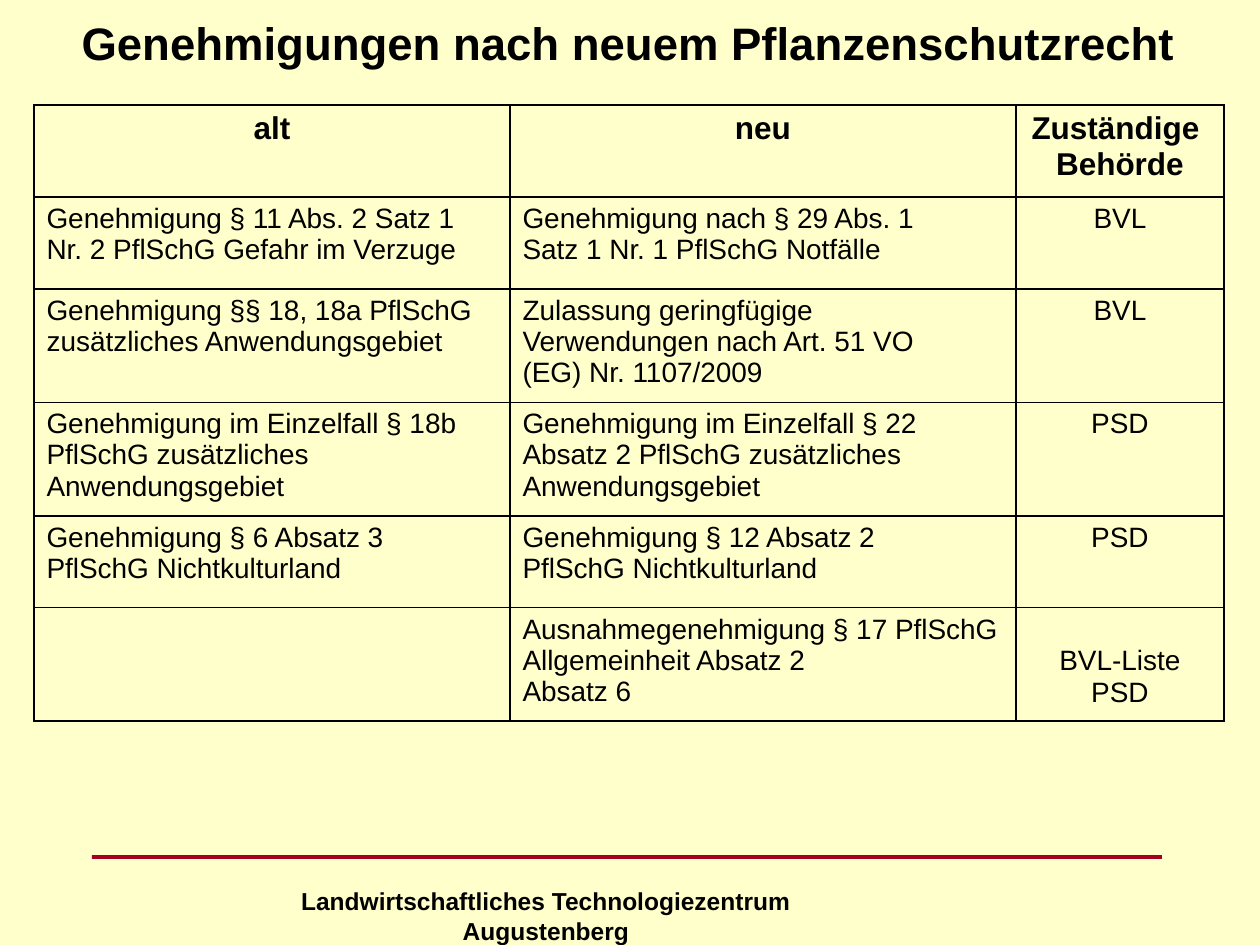
import lxml.etree
import pptx
import pptx.dml.color
import pptx.enum.shapes
import pptx.enum.text
import pptx.oxml.ns
import pptx.util

COLORS = {"background": "FFFFCC", "text": "000000", "rule": "A50021"}
ALIGN = pptx.enum.text.PP_ALIGN
COLUMN_WIDTHS = [476, 506, 208]
ROW_HEIGHTS = [92, 92, 113, 113, 92, 113]
APPROVALS = [
    ("alt", "neu", "Zuständige \nBehörde"),
    ("Genehmigung § 11 Abs. 2 Satz 1 Nr. 2 PflSchG Gefahr im Verzuge",
     "Genehmigung nach § 29 Abs. 1\nSatz 1 Nr. 1 PflSchG Notfälle", "BVL"),
    ("Genehmigung §§ 18, 18a PflSchG\nzusätzliches Anwendungsgebiet",
     "Zulassung geringfügige\nVerwendungen nach Art. 51 VO\n(EG) Nr. 1107/2009", "BVL"),
    ("Genehmigung im Einzelfall § 18b\nPflSchG zusätzliches\nAnwendungsgebiet",
     "Genehmigung im Einzelfall § 22\nAbsatz 2 PflSchG zusätzliches\nAnwendungsgebiet", "PSD"),
    ("Genehmigung § 6 Absatz 3\nPflSchG Nichtkulturland",
     "Genehmigung § 12 Absatz 2\nPflSchG Nichtkulturland", "PSD"),
    ("", "Ausnahmegenehmigung § 17 PflSchG\nAllgemeinheit Absatz 2\nAbsatz 6",
     "BVL-Liste\nPSD"),
]


def px(length):
    return pptx.util.Emu(round(length * 914400 / 126))


def rgb(name):
    return pptx.dml.color.RGBColor.from_string(COLORS[name])


def write(frame, text, size, bold, align):
    frame.text = text
    for paragraph in frame.paragraphs:
        paragraph.alignment = align
        for run in paragraph.runs:
            run.font.name = "Arial"
            run.font.size = pptx.util.Pt(size)
            run.font.bold = bold
            run.font.color.rgb = rgb("text")


def set_margins(frame):
    frame.margin_left = frame.margin_right = pptx.util.Inches(0.1)
    frame.margin_top = frame.margin_bottom = pptx.util.Inches(0.05)


def add_title(slide, text):
    title = slide.shapes.title
    title.left, title.top, title.width, title.height = px(69), px(9), px(1191), px(67)
    frame = title.text_frame
    frame.word_wrap = True
    frame.auto_size = pptx.enum.text.MSO_AUTO_SIZE.NONE
    frame.vertical_anchor = pptx.enum.text.MSO_ANCHOR.TOP
    set_margins(frame)
    write(frame, text, 26, True, ALIGN.LEFT)


def add_borders(cell):
    properties = cell._tc.get_or_add_tcPr()
    for position, side in enumerate(("lnL", "lnR", "lnT", "lnB")):
        line = lxml.etree.Element(pptx.oxml.ns.qn("a:" + side), w="12700")
        fill = lxml.etree.SubElement(line, pptx.oxml.ns.qn("a:solidFill"))
        lxml.etree.SubElement(fill, pptx.oxml.ns.qn("a:srgbClr"), val=COLORS["text"])
        properties.insert(position, line)


def add_approvals_table(slide):
    table = slide.shapes.add_table(
        len(APPROVALS), len(COLUMN_WIDTHS), px(34), px(105),
        px(sum(COLUMN_WIDTHS)), px(sum(ROW_HEIGHTS))).table
    table.first_row = table.horz_banding = False
    for column, width in zip(table.columns, COLUMN_WIDTHS):
        column.width = px(width)
    for row, height in zip(table.rows, ROW_HEIGHTS):
        row.height = px(height)
    for row_index, entries in enumerate(APPROVALS):
        header = row_index == 0
        for column_index, text in enumerate(entries):
            cell = table.cell(row_index, column_index)
            cell.fill.background()
            set_margins(cell)
            centered = header or column_index == 2
            write(cell.text_frame, text, 18 if header else 16, header,
                  ALIGN.CENTER if centered else ALIGN.LEFT)
            add_borders(cell)
    table.cell(len(APPROVALS) - 1, 2).margin_top = px(38)


def add_footer(slide, text):
    rule = slide.shapes.add_shape(
        pptx.enum.shapes.MSO_SHAPE.RECTANGLE, px(92), px(855), px(1070), px(4))
    rule.shadow.inherit = False
    rule.fill.solid()
    rule.fill.fore_color.rgb = rgb("rule")
    rule.line.fill.background()
    institute = slide.shapes.add_textbox(px(274), px(880), px(544), px(65))
    institute.text_frame.word_wrap = True
    set_margins(institute.text_frame)
    write(institute.text_frame, text, 14, True, ALIGN.CENTER)


def main():
    presentation = pptx.Presentation()
    presentation.slide_width, presentation.slide_height = px(1260), px(945)
    slide = presentation.slides.add_slide(presentation.slide_layouts[5])
    slide.background.fill.solid()
    slide.background.fill.fore_color.rgb = rgb("background")
    add_footer(slide, "Landwirtschaftliches Technologiezentrum Augustenberg")
    add_approvals_table(slide)
    add_title(slide, "Genehmigungen nach neuem Pflanzenschutzrecht")
    presentation.save("out.pptx")


if __name__ == "__main__":
    main()
